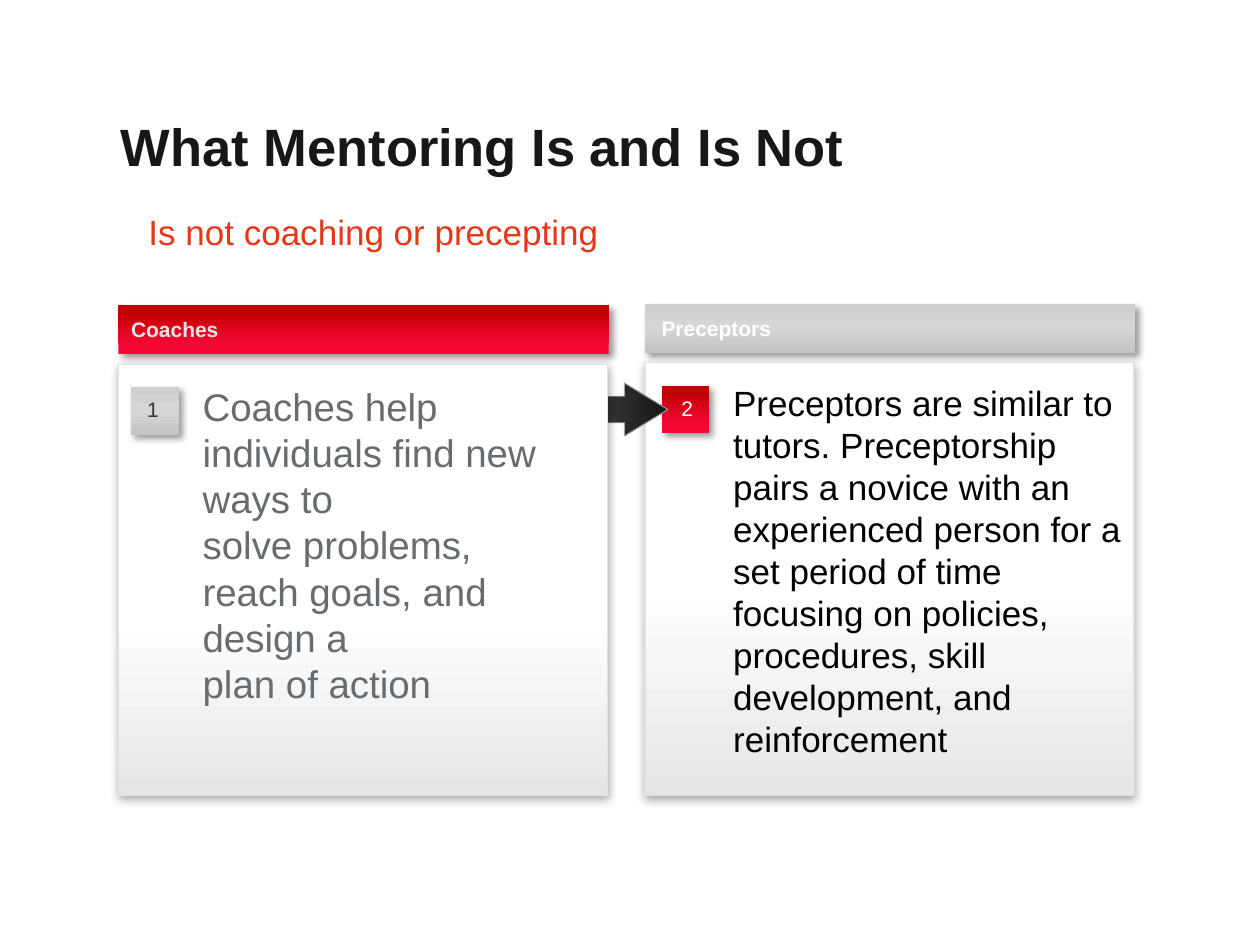
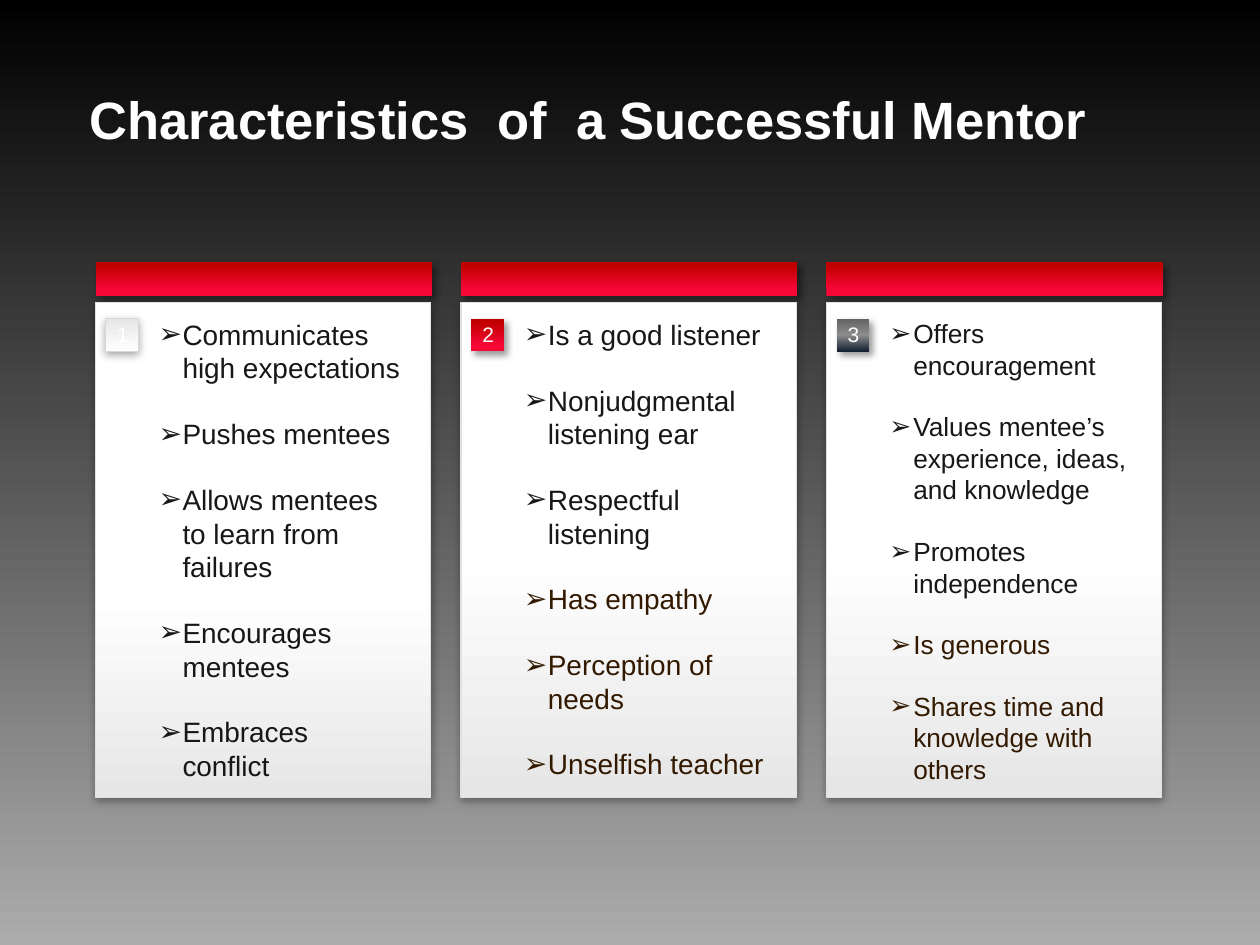
from collections import namedtuple

from lxml.etree import SubElement
from pptx import Presentation
from pptx.dml.color import RGBColor
from pptx.enum.shapes import MSO_SHAPE as Preset
from pptx.enum.text import MSO_ANCHOR as Anchor, PP_ALIGN as Align
from pptx.oxml.ns import qn
from pptx.util import Inches, Pt

Box = namedtuple("Box", "left top width height")
# Stops are (percent, colour); the angle runs clockwise from left to right.
Gradient = namedtuple("Gradient", "stops angle")
Shadow = namedtuple("Shadow", "alpha blur distance angle")

FONT = "Arial"
WHITE, BLACK, INK, BROWN = "FFFFFF", "000000", "171717", "321900"
PALE, SLATE, CHARCOAL, ORANGE = "E6E6E6", "696C6F", "353637", "E83618"
CARD_EDGE, BADGE_EDGE, ARROW_EDGE = "E1E1E1", "D7D8D9", "A0A2A4"

RED = Gradient([(11, "F50736"), (20, "F50736"), (89, "C00000")], 270)
SILVER = Gradient([(0, "CFCFCF"), (50, "D5D5D5"), (100, "C4C4C4")], 90)
STEEL = Gradient([(0, "626262"), (50, "8C8C8C"), (100, "122031")], 90)
FROST = Gradient([(0, WHITE), (100, PALE)], 270)
ARROW = Gradient([(0, "3A3A3A"), (100, INK)], 0)
NIGHT = Gradient([(0, "ACACAC"), (100, BLACK)], 270)

BAND_SHADOW = Shadow(40, 4, 3, 45)
CARD_SHADOW = Shadow(35, 5, 1.8, 90)
LINE_HEIGHT = 1.15


def rgb(value):
    return RGBColor.from_string(value)


def inches(box):
    return [Inches(round(length, 2)) for length in box]


def card_gradient(white_from):
    return Gradient([(0, PALE), (white_from, WHITE), (100, WHITE)], 270)


def paint(fill, element, gradient):
    """Give a fill, held by the XML element, the stops of the gradient."""
    fill.gradient()
    fill.gradient_angle = (360 - gradient.angle) % 360
    stop_list = element.find(".//" + qn("a:gsLst"))
    for stop in list(stop_list):
        stop_list.remove(stop)
    for percent, color in gradient.stops:
        stop = SubElement(stop_list, qn("a:gs"), pos=str(percent * 1000))
        SubElement(stop, qn("a:srgbClr"), val=color)


def cast_shadow(shape, shadow):
    effects = shape._element.spPr.find(qn("a:effectLst"))
    outer = SubElement(
        effects, qn("a:outerShdw"), blurRad=str(Pt(shadow.blur)),
        dist=str(Pt(shadow.distance)), dir=str(shadow.angle * 60000),
        algn="ctr", rotWithShape="0")
    color = SubElement(outer, qn("a:srgbClr"), val=BLACK)
    SubElement(color, qn("a:alpha"), val=str(shadow.alpha * 1000))


def add_block(page, box, gradient, shadow=None, edge=None, weight=0.75,
              preset=Preset.RECTANGLE):
    shape = page.shapes.add_shape(preset, *inches(box))
    paint(shape.fill, shape._element, gradient)
    if edge:
        shape.line.color.rgb = rgb(edge)
        shape.line.width = Pt(weight)
    else:
        shape.line.fill.background()
    shape.shadow.inherit = False
    if shadow:
        cast_shadow(shape, shadow)
    return shape


def style(para, size, color, bold=False, align=Align.LEFT):
    para.alignment = align
    para.font.name = FONT
    para.font.size = Pt(size)
    para.font.bold = bold
    para.font.color.rgb = rgb(color)


def add_text(page, box, text, size, color, align=Align.LEFT):
    frame = page.shapes.add_textbox(*inches(box)).text_frame
    frame.word_wrap = True
    para = frame.paragraphs[0]
    para.text = text
    style(para, size, color, align=align)


def set_heading(shape, text, size, color):
    """Fill a shape with a bold, middle-anchored line that has no side insets."""
    frame = shape.text_frame
    frame.word_wrap = True
    frame.vertical_anchor = Anchor.MIDDLE
    frame.margin_left = frame.margin_right = 0
    para = frame.paragraphs[0]
    para.text = text
    para.line_spacing = 0.95
    style(para, size, color, bold=True)


def add_title(page, box, text, color):
    title = page.shapes.title
    title.left, title.top, title.width, title.height = inches(box)
    set_heading(title, text, 30, color)


def add_bullets(page, box, items, size, ink_count):
    """List the items; those after the first ink_count are brown."""
    frame = page.shapes.add_textbox(*inches(box)).text_frame
    frame.word_wrap = True
    for index, item in enumerate(items):
        para = frame.paragraphs[0] if index == 0 else frame.add_paragraph()
        para.text = item
        style(para, size, INK if index < ink_count else BROWN)
        if index:
            para.space_before = Pt(size * LINE_HEIGHT)
        props = para._p.get_or_add_pPr()
        props.set("marL", str(Inches(0.19)))
        props.set("indent", str(Inches(-0.19)))
        SubElement(props, qn("a:buFont"), typeface=FONT)
        SubElement(props, qn("a:buChar"), char="➢")


def add_panel(page, box, band_height, card_top, band, white_from):
    """Draw a coloured band with a pale card under it."""
    add_block(page, box._replace(height=band_height), band, BAND_SHADOW)
    card = Box(box.left, box.top + card_top, box.width - 0.01,
               box.height - card_top)
    add_block(page, card, card_gradient(white_from), CARD_SHADOW, CARD_EDGE)


def add_role(page, box, inset, band, badge, white_from, heading,
             heading_color, number, number_color, number_align,
             body, body_width, body_size, body_color):
    add_panel(page, box, 0.39, 0.47, band, white_from)
    left, top = box.left + inset, box.top
    add_block(page, Box(left, top + 0.65, 0.38, 0.38), badge, BAND_SHADOW)
    add_text(page, Box(left + 0.47, top + 0.57, body_width, 3.47),
             body, body_size, body_color)
    label = page.shapes.add_textbox(*inches(Box(left, top + 0.08, 2.92, 0.24)))
    set_heading(label, heading, 12, heading_color)
    add_text(page, Box(left + 0.03, top + 0.68, 0.35, 0.3),
             number, 12, number_color, number_align)


def add_trait_column(page, box, number, badge, badge_edge, white_from,
                     items, size, ink_count):
    add_panel(page, box, 0.27, 0.32, RED, white_from)
    left, top = box.left + 0.08, box.top
    add_block(page, Box(left, top + 0.45, 0.26, 0.26), badge,
              CARD_SHADOW if badge_edge else BAND_SHADOW, badge_edge)
    add_text(page, Box(left - 0.01, top + 0.42, 0.26, 0.3),
             number, 12, WHITE, Align.CENTER)
    add_bullets(page, Box(left + 0.32, top + 0.39, 2.12, 4.1),
                items, size, ink_count)


def build_comparison(page):
    add_title(page, Box(0.96, 0.85, 7.4, 0.66),
              "What Mentoring Is and Is Not", INK)
    add_role(page, Box(5.12, 2.41, 3.89, 3.9), 0.13, SILVER, RED, 49,
             "Preceptors", WHITE, "2", WHITE, Align.CENTER,
             "Preceptors are similar to tutors. Preceptorship pairs a novice "
             "with an experienced person for a set period of time focusing on "
             "policies, procedures, skill development, and reinforcement",
             3.28, 20, BLACK)
    arrow = add_block(page, Box(4.72, 3.04, 0.58, 0.42), ARROW,
                      edge=ARROW_EDGE, weight=0.5, preset=Preset.RIGHT_ARROW)
    arrow.adjustments[0], arrow.adjustments[1] = 0.5, 0.82
    add_role(page, Box(0.94, 2.42, 3.89, 3.89), 0.1, RED, SILVER, 41,
             "Coaches", PALE, "1", CHARCOAL, Align.LEFT,
             "Coaches help individuals find new ways to\nsolve problems, "
             "reach goals, and design a\nplan of action",
             3.08, 22, SLATE)
    add_text(page, Box(1.08, 1.62, 4.64, 0.74),
             "Is not coaching or precepting", 20, ORANGE)


def build_characteristics(page):
    paint(page.background.fill, page._element, NIGHT)
    add_title(page, Box(0.71, 0.42, 8.57, 1.09),
              "Characteristics  of  a Successful Mentor", WHITE)
    columns = [
        ("1", FROST, BADGE_EDGE, 41,
         ["Communicates high expectations", "Pushes mentees",
          "Allows mentees to learn from failures", "Encourages mentees",
          "Embraces conflict"], 16, 5),
        ("2", RED, None, 49,
         ["Is a good listener", "Nonjudgmental listening ear",
          "Respectful listening", "Has empathy", "Perception of needs",
          "Unselfish teacher"], 16, 3),
        ("3", STEEL, None, 49,
         ["Offers encouragement",
          "Values mentee’s experience, ideas, and knowledge",
          "Promotes independence", "Is generous",
          "Shares time and knowledge with others"], 15, 3),
    ]
    for index, column in enumerate(columns):
        add_trait_column(page, Box(0.76 + 2.9 * index, 2.08, 2.67, 4.25),
                         *column)


def main():
    deck = Presentation()
    deck.slide_width, deck.slide_height = Inches(10), Inches(7.5)
    title_only = deck.slide_layouts[5]
    for build in (build_comparison, build_characteristics):
        build(deck.slides.add_slide(title_only))
    deck.save("out.pptx")


if __name__ == "__main__":
    main()
